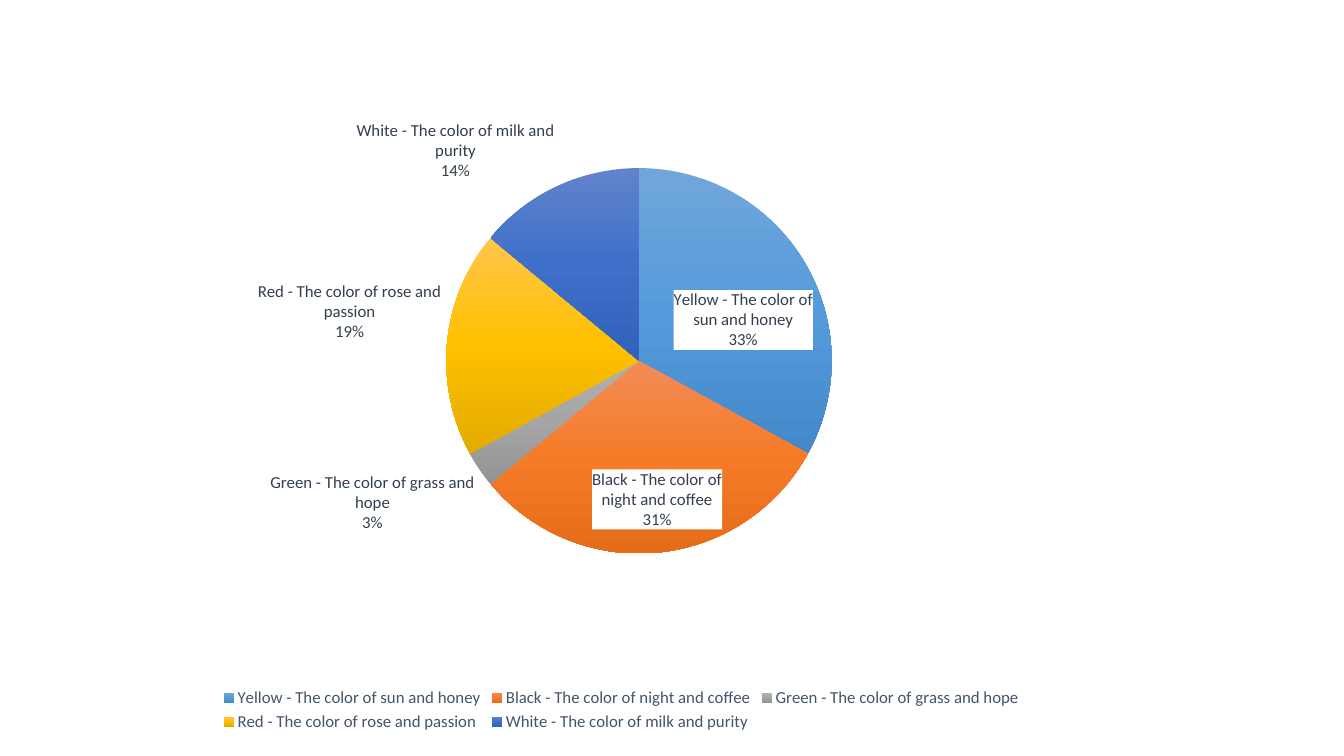
from copy import deepcopy

from pptx import Presentation
from pptx.chart.data import CategoryChartData as ChartData
from pptx.dml.color import RGBColor
from pptx.enum.chart import XL_CHART_TYPE as Kind
from pptx.enum.chart import XL_LABEL_POSITION as Spot
from pptx.enum.chart import XL_LEGEND_POSITION as Side
from pptx.oxml import parse_xml
from pptx.oxml.ns import nsdecls
from pptx.util import Cm, Pt

PARTS = [
    ("Yellow - The color of sun and honey", 33, ("71A6DB", "559BDB", "448ACA")),
    ("Black - The color of night and coffee", 31, ("F18C57", "F67B28", "E56C19")),
    ("Green - The color of grass and hope", 3, ("AFAFAF", "A5A5A5", "939393")),
    ("Red - The color of rose and passion", 19, ("FFC64B", "FFC000", "E3AB00")),
    ("White - The color of milk and purity", 14, ("6183CB", "3E70CA", "3062BB")),
]
PLOT = {"x": 0.333, "y": 0.221, "w": 0.368, "h": 0.529}


def hue(code):
    return RGBColor.from_string(code)


def style(font, name="Calibri", size=12, color="000000"):
    font.name, font.size = name, Pt(size)
    font.color.rgb = hue(color)


class Deck:
    """Holds the text style and the current slide, and draws its elements."""

    def __init__(self, show, face="Calibri"):
        self.face = face
        self.slide = show.slides.add_slide(show.slide_layouts[6])

    def pie(self, parts, left, top, width, height):
        data = ChartData()
        data.categories = [name for name, _, _ in parts]
        data.add_series("Series 1", [value for _, value, _ in parts])
        box = [Cm(n) for n in (left, top, width, height)]
        chart = self.slide.shapes.add_chart(Kind.PIE, *box, data).chart
        chart.has_title = False
        style(chart.font, self.face, 10)
        plot = chart.plots[0]
        plot.vary_by_categories = True
        for i, (_, _, tones) in enumerate(parts):
            self.shade(plot.series[0].points[i].format.fill, tones, plot, i)
        self.place(chart)
        self.label(plot)
        self.legend(chart)

    def shade(self, fill, tones, plot, i):
        fill.gradient()
        fill.gradient_angle = 270
        stops = plot.series[0]._element.xpath("c:dPt//a:gsLst")[i]
        stops.insert(1, deepcopy(stops[0]))
        for stop, tone, at in zip(fill.gradient_stops, tones, (0, 0.5, 1)):
            stop.color.rgb = hue(tone)
            stop.position = at

    def place(self, chart):
        area = chart._chartSpace.chart.plotArea
        for old in area.xpath("c:layout"):
            area.remove(old)
        modes = "".join(f'<c:{k}Mode val="edge"/>' for k in "xy")
        sizes = "".join(f'<c:{k} val="{v}"/>' for k, v in PLOT.items())
        area.insert(0, parse_xml(
            f'<c:layout {nsdecls("c")}><c:manualLayout>'
            f'<c:layoutTarget val="inner"/>{modes}{sizes}'
            '</c:manualLayout></c:layout>'))

    def label(self, plot):
        plot.has_data_labels = True
        tags = plot.data_labels
        tags.show_category_name = tags.show_percentage = True
        tags.show_value = False
        tags.position = Spot.BEST_FIT
        style(tags.font, self.face, 12, "333F50")
        text = tags._element.xpath("c:txPr")[0]
        text.addprevious(parse_xml(
            f'<c:spPr {nsdecls("c", "a")}><a:solidFill>'
            f'<a:srgbClr val="{hue("FFFFFF")}"/></a:solidFill></c:spPr>'))
        text.addnext(parse_xml(f'<c:separator {nsdecls("c")}>\n</c:separator>'))
        mark = tags._element.xpath("c:separator")[0]
        tags._element.xpath("c:showBubbleSize")[0].addnext(mark)

    def legend(self, chart):
        chart.has_legend = True
        chart.legend.position = Side.BOTTOM
        chart.legend.include_in_layout = False
        style(chart.legend.font, self.face, 12, "44546A")


def main():
    show = Presentation()
    show.slide_width, show.slide_height = Cm(33.87), Cm(19.05)
    Deck(show).pie(PARTS, 2.46, 0.18, 26.39, 18.36)
    show.save("out.pptx")


if __name__ == "__main__":
    main()
